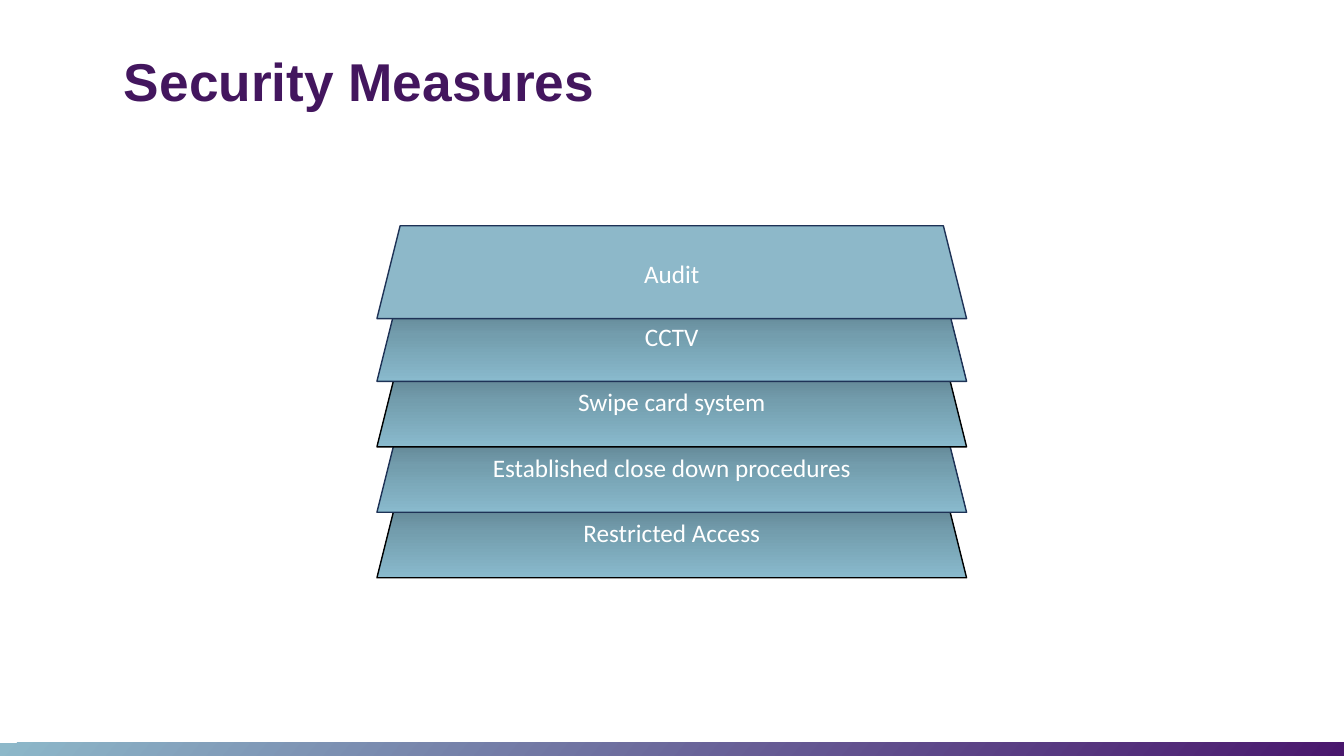
import lxml.etree
import pptx
import pptx.dml.color
import pptx.enum.shapes
import pptx.enum.text
import pptx.oxml.ns
import pptx.util

Cm = pptx.util.Cm
Shape = pptx.enum.shapes.MSO_SHAPE
Align = pptx.enum.text.PP_ALIGN
Anchor = pptx.enum.text.MSO_ANCHOR
HUES = {
    "title": "43165E", "text": "FFFFFF", "sky": "8DB8C9", "plum": "49176D",
    "dark": "516E7A", "mid": "739DAD", "pale": "89BACD",
    "black": "000000", "navy": "1E3256",
}
TIERS = [
    ("Audit", "navy"),
    ("CCTV", "navy"),
    ("Swipe card system", "black"),
    ("Established close down procedures", "navy"),
    ("Restricted Access", "black"),
]


def hue(name):
    """Return the named colour."""
    return pptx.dml.color.RGBColor.from_string(HUES[name])


def write(shape, text, font, size, color, bold=False, align=Align.CENTER,
          anchor=Anchor.MIDDLE, space=1.0):
    """Put formatted text in a shape."""
    frame = shape.text_frame
    frame.word_wrap = True
    frame.auto_size = pptx.enum.text.MSO_AUTO_SIZE.NONE
    frame.vertical_anchor = anchor
    para = frame.paragraphs[0]
    para.alignment = align
    para.line_spacing = space
    run = para.add_run()
    run.text = text
    run.font.name = font
    run.font.size = pptx.util.Pt(size)
    run.font.bold = bold
    run.font.color.rgb = hue(color)


def blend(shape, names, angle):
    """Fill a shape with evenly spaced colours, the angle being clockwise."""
    qn = pptx.oxml.ns.qn
    shape.fill.gradient()
    shape.fill.gradient_angle = 360 - angle
    stops = shape._element.spPr.find(".//" + qn("a:gsLst"))
    for stop in list(stops):
        stops.remove(stop)
    for i, name in enumerate(names):
        stop = lxml.etree.SubElement(stops, qn("a:gs"))
        stop.set("pos", str(i * 100000 // (len(names) - 1)))
        lxml.etree.SubElement(stop, qn("a:srgbClr")).set("val", HUES[name])


def band(slide, left, top, width, height):
    """Draw the colour band along the foot."""
    bar = slide.shapes.add_shape(Shape.RECTANGLE, left, top, width, height)
    bar.shadow.inherit = False
    bar.line.fill.background()
    blend(bar, ["sky", "plum"], 40)


def head(slide, left, top, width, height):
    """Place the title."""
    title = slide.shapes.title
    title.left, title.top, title.width, title.height = left, top, width, height
    write(title, "Security Measures", font="Arial", size=38, color="title",
          bold=True, align=Align.LEFT, anchor=Anchor.BOTTOM, space=0.9)


def stack(slide, left, top, width, height):
    """Pile the tiers from the bottom up, with the lid a little lower."""
    tall, step = Cm(2.34), Cm(1.65)
    base = top + height - tall
    last = len(TIERS) - 1
    for i, (text, edge) in reversed(list(enumerate(TIERS))):
        spot = base - (last - i) * step if i else top
        tier = slide.shapes.add_shape(Shape.TRAPEZOID, left, spot, width, tall)
        tier.shadow.inherit = False
        tier.line.color.rgb = hue(edge)
        tier.line.width = pptx.util.Pt(1)
        if i:
            blend(tier, ["dark", "mid", "pale"], 90)
        else:
            tier.fill.solid()
            tier.fill.fore_color.rgb = hue("sky")
        write(tier, text, font="Calibri", size=18, color="text")


def main():
    """Build and save the slide."""
    deck = pptx.Presentation()
    deck.slide_width, deck.slide_height = Cm(33.87), Cm(19.05)
    slide = deck.slides.add_slide(deck.slide_layouts.get_by_name("Title Only"))
    band(slide, 0, Cm(18.72), deck.slide_width, Cm(0.33))
    head(slide, Cm(2.87), Cm(1.32), Cm(23.6), Cm(1.65))
    stack(slide, Cm(9.5), Cm(5.69), Cm(14.86), Cm(8.87))
    deck.save("out.pptx")


if __name__ == "__main__":
    main()
